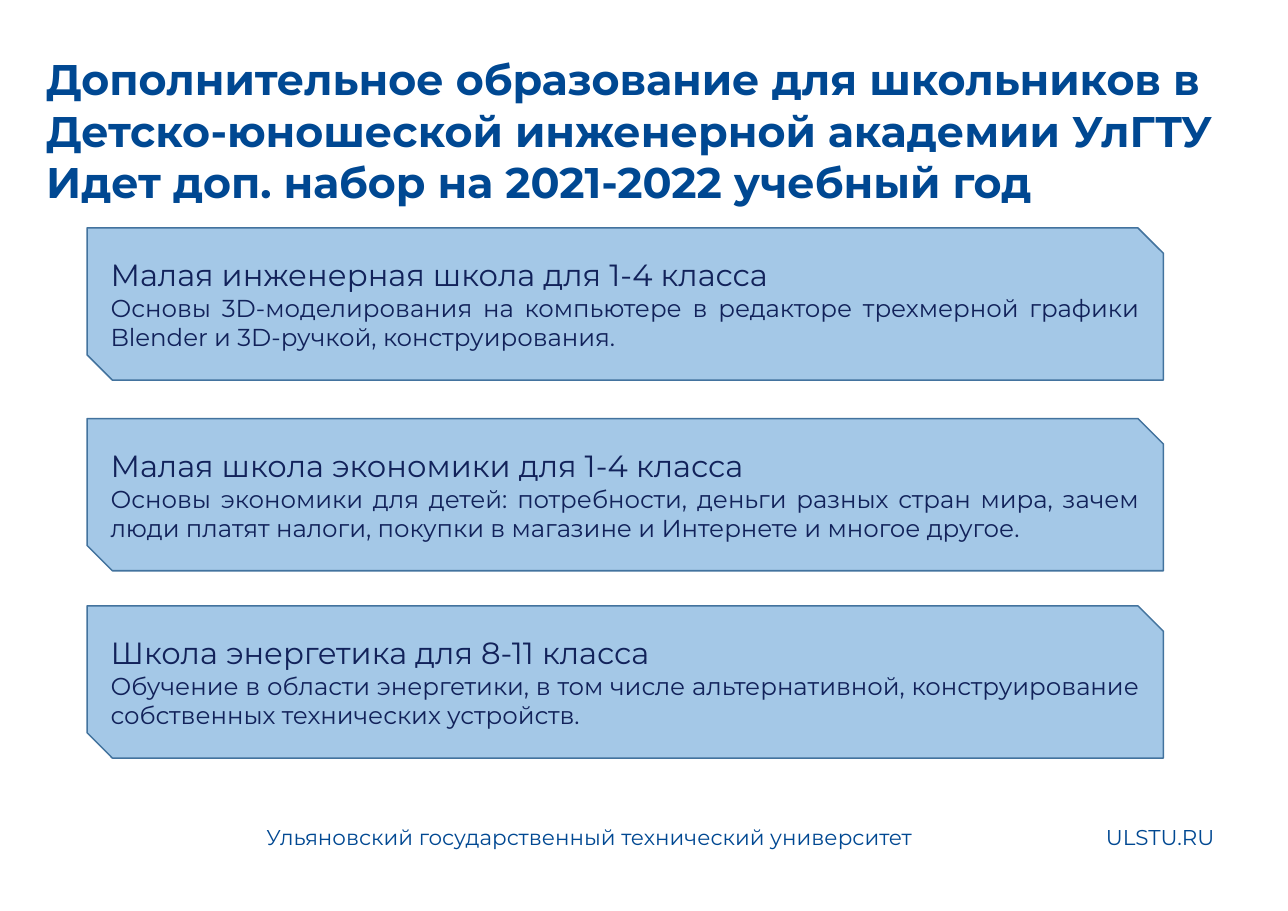
"""Builds a slide on extra classes for school pupils."""
from lxml import etree
from pptx import Presentation
from pptx.dml.color import RGBColor
from pptx.enum.shapes import MSO_SHAPE
from pptx.enum.text import MSO_ANCHOR, MSO_AUTO_SIZE, PP_ALIGN
from pptx.oxml.ns import qn
from pptx.util import Pt

SNIPPED = MSO_SHAPE.SNIP_2_DIAG_RECTANGLE
TOP, MIDDLE = MSO_ANCHOR.TOP, MSO_ANCHOR.MIDDLE
NO_FIT = MSO_AUTO_SIZE.NONE
LEFT, JUSTIFY = PP_ALIGN.LEFT, PP_ALIGN.JUSTIFY

TITLE = [
    "Дополнительное образование для школьников в Детско-юношеской инженерной академии УлГТУ",
    "Идет доп. набор на 2021-2022 учебный год",
]
SCHOOLS = [
    (149, "Малая инженерная школа для 1-4 класса",
     "Основы 3D-моделирования на компьютере в редакторе трехмерной графики "
     "Blender и 3D-ручкой, конструирования."),
    (273.6, "Малая школа экономики для 1-4 класса",
     "Основы экономики для детей: потребности, деньги разных стран мира, зачем "
     "люди платят налоги, покупки в магазине и Интернете и многое другое."),
    (396, "Школа энергетика для 8-11 класса",
     "Обучение в области энергетики, в том числе альтернативной, конструирование "
     "собственных технических устройств."),
]
FOOTER = [
    (167, 446.4, "Ульяновский государственный технический университет"),
    (715.7, 100.8, "ULSTU.RU"),
]


def color(value):
    """Turn a hex string into a colour."""
    return RGBColor.from_string(value)


class SlideBuilder:
    """Holds the style and the current slide."""

    font = "Montserrat"
    heading_color = "004892"
    card_text = "12225A"
    card_fill = "5B9BD5"
    card_line = "43739E"
    card_opacity = 55

    def __init__(self, deck):
        """Add a slide with a title to the deck."""
        self.slide = deck.slides.add_slide(deck.slide_layouts[5])

    def add_lines(self, frame, lines, text_color, bold=False, anchor=TOP):
        """Fill a frame with lines of text, size and alignment."""
        frame.word_wrap = True
        frame.auto_size = NO_FIT
        frame.vertical_anchor = anchor
        for index, (text, size, align) in enumerate(lines):
            paragraph = frame.add_paragraph() if index else frame.paragraphs[0]
            paragraph.alignment = align
            paragraph.line_spacing = 1.0
            paragraph.space_before = Pt(0)
            run = paragraph.add_run()
            run.text = text
            run.font.name = self.font
            run.font.size = Pt(size)
            run.font.bold = bold
            run.font.color.rgb = color(text_color)

    def title(self, left, top, width, height, lines):
        """Place and fill the title."""
        heading = self.slide.shapes.title
        heading.left, heading.top = Pt(left), Pt(top)
        heading.width, heading.height = Pt(width), Pt(height)
        self.add_lines(heading.text_frame, [(line, 28, LEFT) for line in lines],
                       self.heading_color, bold=True)

    def label(self, left, top, width, height, text):
        """Add one line of footer text."""
        box = self.slide.shapes.add_textbox(Pt(left), Pt(top), Pt(width), Pt(height))
        self.add_lines(box.text_frame, [(text, 14, LEFT)], self.heading_color)

    def card(self, left, top, width, height, name, details):
        """Add a translucent card with a school and its description."""
        card = self.slide.shapes.add_shape(SNIPPED, Pt(left), Pt(top), Pt(width), Pt(height))
        card.shadow.inherit = False
        card.fill.solid()
        card.fill.fore_color.rgb = color(self.card_fill)
        tint = card.element.spPr.find(qn("a:solidFill"))[0]
        etree.SubElement(tint, qn("a:alpha")).set("val", str(self.card_opacity * 1000))
        card.line.color.rgb = color(self.card_line)
        card.line.width = Pt(1)
        self.add_lines(card.text_frame, [(name, 20, LEFT), (details, 16, JUSTIFY)],
                       self.card_text, anchor=MIDDLE)


def main():
    """Build and save the slide."""
    deck = Presentation()
    deck.slide_width, deck.slide_height = Pt(841.7), Pt(595.4)
    builder = SlideBuilder(deck)
    builder.title(23, 31, 803.5, 180.7, TITLE)
    for left, width, text in FOOTER:
        builder.label(left, 535, width, 28, text)
    for top, name, details in SCHOOLS:
        builder.card(56.9, top, 703.4, 99.4, name, details)
    deck.save("out.pptx")


if __name__ == "__main__":
    main()
